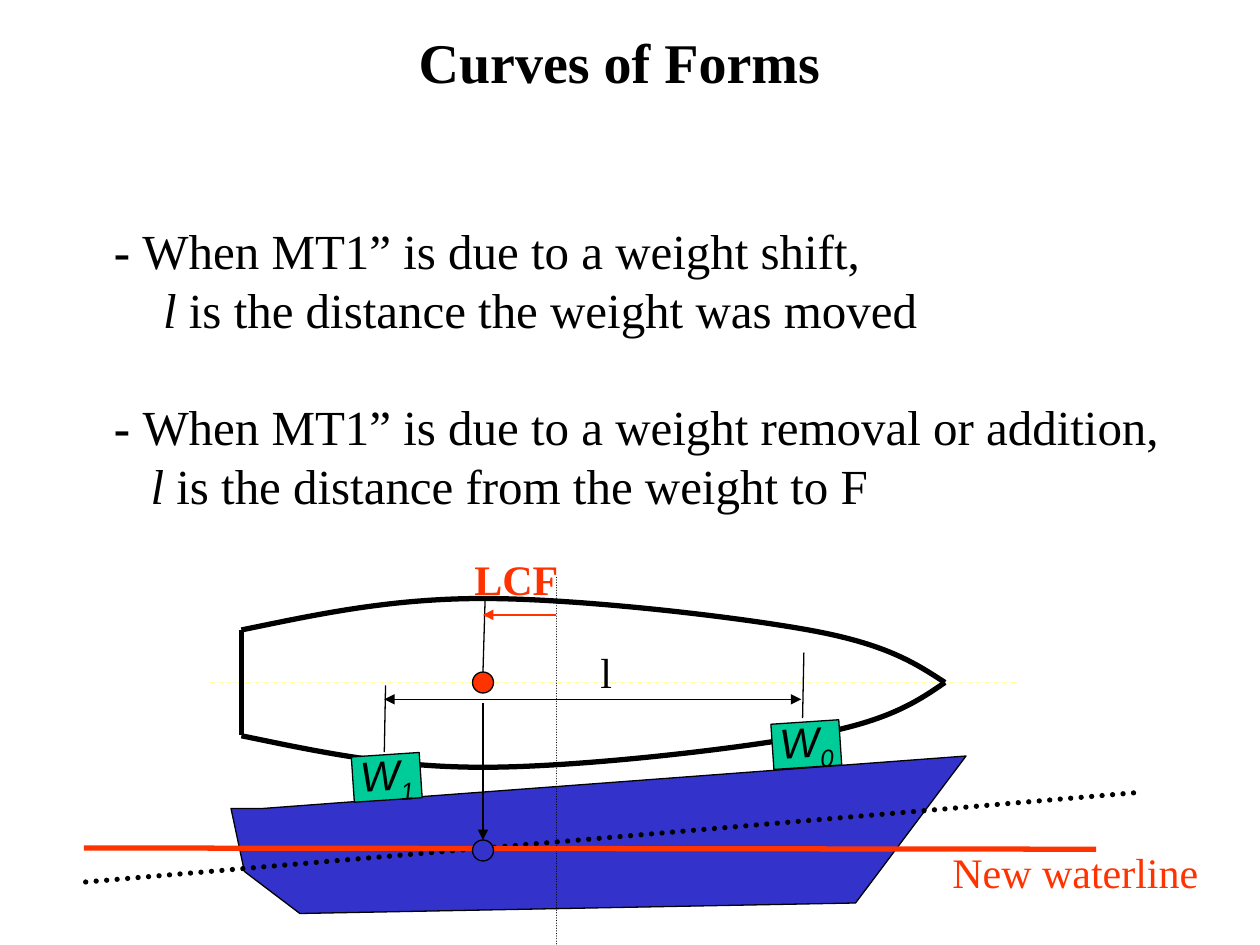
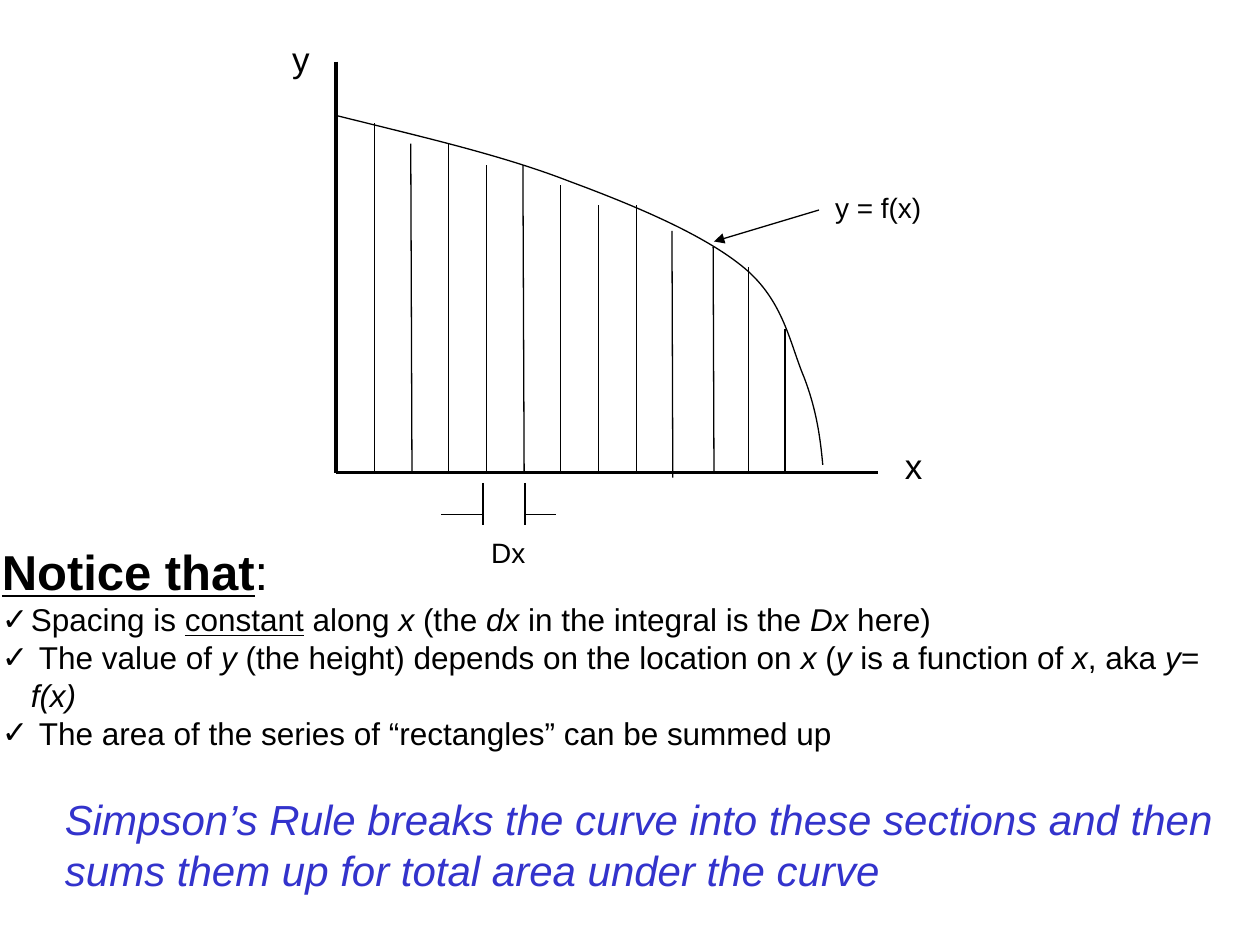
from pptx import Presentation
from pptx import util as u
from pptx.dml.color import RGBColor
from pptx.enum import dml, shapes, text
from pptx.oxml.ns import qn

# ---- Shared look ----
BLACK, RED, BLUE, GREEN, YELLOW = "000000", "FF3300", "3333CC", "00CC99", "FFFF66"
SERIF, SANS = "Times New Roman", "Arial"
THIN, AXIS, THICK = 0.75, 2.25, 3
GRID = 12  # drawing grid: columns and rows per inch

# ---- Slide 1 content: spans are (text, styles), styles from b, i, u, - (subscript) ----
BREAK = ("\n", "")
WEIGHT_RULES = [  # left indent, first-line indent, space before, spans
    (0.78, -0.39, 0, [("- ", "b"), ("When MT1” is due to a weight shift, ", ""), BREAK,
                      ("l", "i"), (" is the distance the weight was moved", "")]),
    (0.39, 0, 33.5, [("- ", "b"), ("When MT1” is due to a weight removal or addition,", "")]),
    (0.68, 0, 0, [("l", "i"), (" is the distance from the weight to F", "")]),
]
KEEL_X, CENTER_Y = 3.83, 5.42  # centre of flotation in the plan view
STERN, MIDSHIP = 1.92, 4.42
HULL_SIDE = [(1.83, 6.42), (2.08, 6.42), (7.67, 6), (6.79, 7.17), (2.38, 7.25), (1.94, 6.92)]
DECK_EDGE = [(1.92, 5), (2.5, 4.88), (3.08, 4.75), (3.83, 4.75), (4.58, 4.75),
             (5.81, 4.89), (6.42, 5), (7.03, 5.11), (7.26, 5.26), (7.5, 5.42)]

# ---- Slide 2 content ----
ORIGIN = (2.67, 3.75)
CURVE = [(2.67, 0.92), (3.33, 1.08), (3.98, 1.23), (4.52, 1.44), (5.06, 1.64), (5.6, 1.87),
         (5.91, 2.13), (6.22, 2.39), (6.27, 2.73), (6.38, 2.99), (6.48, 3.25),
         (6.51, 3.47), (6.53, 3.69)]
ORDINATES = [  # top x, top y, foot x
    (2.97, 0.98, 2.97), (3.26, 1.14, 3.27), (3.56, 1.14, 3.56), (3.86, 1.31, 3.86),
    (4.15, 1.31, 4.16), (4.45, 1.47, 4.45), (4.75, 1.63, 4.75), (5.05, 1.63, 5.05),
    (5.33, 1.83, 5.34), (5.66, 1.96, 5.67), (5.94, 2.12, 5.94), (6.23, 2.61, 6.23)]
LOW_FOOT = {5.34: 3.79}  # the one ordinate that crosses the axis
GRAPH_LABELS = [("Dx", 16, 3.8, 4.2, 0.47, 0.37), ("y = f(x)", 16, 6.53, 1.46, 0.89, 0.37),
                ("y", 20, 2.22, 0.25, 0.34, 0.43), ("x", 20, 7.08, 3.48, 0.34, 0.43)]
NOTICES = [
    [("Spacing is ", ""), ("constant", "u"), (" along ", ""), ("x", "i"), (" (the ", ""),
     ("dx", "i"), (" in the integral is the ", ""), ("Dx", "i"), (" here)", "")],
    [(" The value of ", ""), ("y", "i"), (" (the height) depends on the location on ", ""),
     ("x", "i"), (" (", ""), ("y", "i"), (" is a function of ", ""), ("x", "i"),
     (", aka ", ""), ("y= f(x)", "i")],
    [(" The area of the series of “rectangles” can be summed up", "")],
]
SIMPSON = ["Simpson’s Rule breaks the curve into these sections and then",
           "sums them up for total area under the curve"]


# ---- Helpers ----
def color(value):
    return RGBColor.from_string(value)


def inch(value):
    """Length on the slide, snapped to the drawing grid when it is next to it."""
    snapped = round(value * GRID) / GRID
    return u.Inches(snapped if abs(snapped - value) < 0.005 else value)


def add_child(parent, tag, **attributes):
    child = parent.makeelement(qn("a:" + tag), attributes)
    parent.append(child)
    return child


def add_spans(para, spans, size, font, ink=BLACK):
    for span_text, styles in spans:
        if (span_text, styles) == BREAK:
            para.add_line_break()
            continue
        span = para.add_run()
        span.text = span_text
        span.font.size, span.font.name = u.Pt(size), font
        span.font.color.rgb = color(ink)
        span.font.bold, span.font.italic = "b" in styles, "i" in styles
        span.font.underline = "u" in styles
        if "-" in styles:
            span.font._element.set("baseline", "-25000")


def indent(para, left, first):
    props = para._p.get_or_add_pPr()
    props.set("marL", str(u.Inches(left)))
    props.set("indent", str(u.Inches(first)))
    return props


def add_box(page, left, top, width, height, wrap=False):
    frame = page.shapes.add_textbox(*map(inch, (left, top, width, height))).text_frame
    frame.word_wrap = wrap
    frame.auto_size = text.MSO_AUTO_SIZE.SHAPE_TO_FIT_TEXT
    return frame


def add_label(page, words, place, size, font, ink=BLACK, styles="", wrap=False):
    para = add_box(page, *place, wrap).paragraphs[0]
    add_spans(para, [(words, styles)], size, font, ink)
    return para


def next_para(frame, index):
    return frame.add_paragraph() if index else frame.paragraphs[0]


def paint(shape, fill, width=THIN):
    shape.shadow.inherit = False
    if fill:
        shape.fill.solid()
        shape.fill.fore_color.rgb = color(fill)
    else:
        shape.fill.background()
    shape.line.color.rgb = color(BLACK)
    shape.line.width = u.Pt(width)
    return shape


def add_line(page, start, end, ink=BLACK, width=THIN, dotted=False, arrows=()):
    line = page.shapes.add_connector(shapes.MSO_CONNECTOR.STRAIGHT, *map(inch, (*start, *end)))
    line.line.color.rgb = color(ink)
    line.line.width = u.Pt(width)
    stroke = line.line._get_or_add_ln()
    if dotted:
        line.line.dash_style = dml.MSO_LINE.ROUND_DOT
        stroke.set("cap", "rnd")
    for end_name in arrows:  # headEnd comes before tailEnd
        add_child(stroke, end_name, type="triangle")
    add_child(line._element.spPr, "effectLst")


def add_outline(page, points, fill=None, width=THIN, closed=False):
    points = [(inch(x), inch(y)) for x, y in points]
    pen = page.shapes.build_freeform(*points[0])
    pen.add_line_segments(points[1:], close=closed)
    return paint(pen.convert_to_shape(), fill, width)


def add_curve(page, knots, width=THIN):
    """Open chain of cubic curves: a start, then two handles and an end for each."""
    outline = add_outline(page, knots, width=width)
    route = next(outline._element.iter(qn("a:pathLst")))[0]
    segments = route.findall(qn("a:lnTo"))
    for index, segment in enumerate(segments):
        if index % 3 == 0:
            cubic = add_child(route, "cubicBezTo")
        cubic.append(segment[0])
        route.remove(segment)


def add_dot(page, middle_y, fill):
    size = 2 / GRID
    place = (KEEL_X - size / 2, middle_y - size / 2, size, size)
    paint(page.shapes.add_shape(shapes.MSO_SHAPE.OVAL, *map(inch, place)), fill)


def add_weight(page, number, left, top):
    block = page.shapes.add_shape(shapes.MSO_SHAPE.RECTANGLE,
                                  *map(inch, (left, top, 0.54, 0.36)))
    paint(block, GREEN).rotation = 356.2
    frame = block.text_frame
    frame.word_wrap = False
    frame.vertical_anchor = text.MSO_ANCHOR.MIDDLE
    para = frame.paragraphs[0]
    para.alignment = text.PP_ALIGN.CENTER
    add_spans(para, [("W", "i"), (number, "i-")], 24, SANS)


# ---- Slides ----
def build_forms(page):
    title = add_label(page, "Curves of Forms", (0.25, 0.17, 9.33, 0.63), 32, SERIF,
                      styles="b", wrap=True)
    title.alignment = text.PP_ALIGN.CENTER
    rules = add_box(page, 0.42, 1.7, 9.58, 2.44, wrap=True)
    for index, (left, first, before, spans) in enumerate(WEIGHT_RULES):
        para = next_para(rules, index)
        indent(para, left, first)
        para.space_before = u.Pt(before)
        add_spans(para, spans, 28, SERIF)

    # Side view, then the plan view mirrored about its centreline
    add_outline(page, HULL_SIDE, BLUE, closed=True)
    add_line(page, (1.67, CENTER_Y), (8.08, CENTER_Y), YELLOW, dotted=True)
    mirrored = [(x, 2 * CENTER_Y - y) for x, y in DECK_EDGE]
    for edge in (DECK_EDGE, mirrored):
        add_curve(page, edge, THICK)
    add_line(page, (STERN, 5), (STERN, 5.83), width=THICK)
    add_dot(page, CENTER_Y, RED)
    add_line(page, (MIDSHIP, 4.58), (MIDSHIP, 7.5), dotted=True)

    # Waterlines and centre of flotation
    add_line(page, (0.68, 7), (9.03, 6.29), width=THICK, dotted=True)
    add_line(page, (KEEL_X, 5.58), (KEEL_X, 6.67), arrows=["tailEnd"])
    add_line(page, (8.7, 6.74), (0.67, 6.73), RED, THICK)
    add_label(page, "LCF", (3.67, 4.34, 1, 0.5), 24, SERIF, RED, "b", wrap=True)
    add_line(page, (3.85, 4.76), (KEEL_X, 5.33))
    add_line(page, (MIDSHIP, 4.88), (KEEL_X, 4.88), RED, arrows=["tailEnd"])
    add_label(page, "New waterline", (7.46, 6.67, 2.15, 0.5), 24, SERIF, RED)
    add_dot(page, 6.75, BLUE)

    # Weight shift
    add_weight(page, "1", 2.8, 5.99)
    add_line(page, (6.37, 5.7), (6.38, 5.18))
    add_line(page, (3.05, 5.55), (6.36, 5.55), arrows=["headEnd", "tailEnd"])
    add_label(page, "l", (4.67, 5.08, 0.41, 0.5), 24, SERIF, wrap=True)
    add_weight(page, "0", 6.13, 5.73)
    add_line(page, (3.05, 5.97), (3.06, 5.44))


def build_simpson(page):
    # Axes, curve and ordinates
    left, base = ORIGIN
    add_line(page, (left, 0.49), ORIGIN, width=AXIS)
    add_line(page, ORIGIN, (6.97, base), width=AXIS)
    add_curve(page, CURVE)
    for top_x, top_y, foot in ORDINATES:
        add_line(page, (top_x, top_y), (foot, LOW_FOOT.get(foot, base)))
    for x, outer in ((3.83, 3.5), (4.17, 4.42)):  # spacing marks
        add_line(page, (x, 3.83), (x, 4.17))
        add_line(page, (x, 4.08), (outer, 4.08))
    for words, size, *place in GRAPH_LABELS:
        add_label(page, words, place, size, SANS)

    # Remarks
    notice = add_box(page, -0.08, 4.25, 10.1, 1.47, wrap=True)
    add_spans(notice.paragraphs[0], [("Notice that", "bu"), (":", "")], 28, SANS)
    for spans in NOTICES:
        para = notice.add_paragraph()
        props = indent(para, 0.23, -0.23)
        add_child(props, "buFont", typeface=SANS)
        add_child(props, "buChar", char="✓")
        add_spans(para, spans, 18, SANS)
    summary = add_box(page, 0.42, 6.25, 9.41, 0.9)
    for index, words in enumerate(SIMPSON):
        add_spans(next_para(summary, index), [(words, "i")], 24, SANS, BLUE)
    add_line(page, (6.5, 1.67), (5.67, 1.92), arrows=["tailEnd"])


def main():
    deck = Presentation()
    deck.slide_width, deck.slide_height = u.Inches(10), u.Inches(7.5)
    for build in (build_forms, build_simpson):
        build(deck.slides.add_slide(deck.slide_layouts[6]))
    deck.save("out.pptx")


if __name__ == "__main__":
    main()
